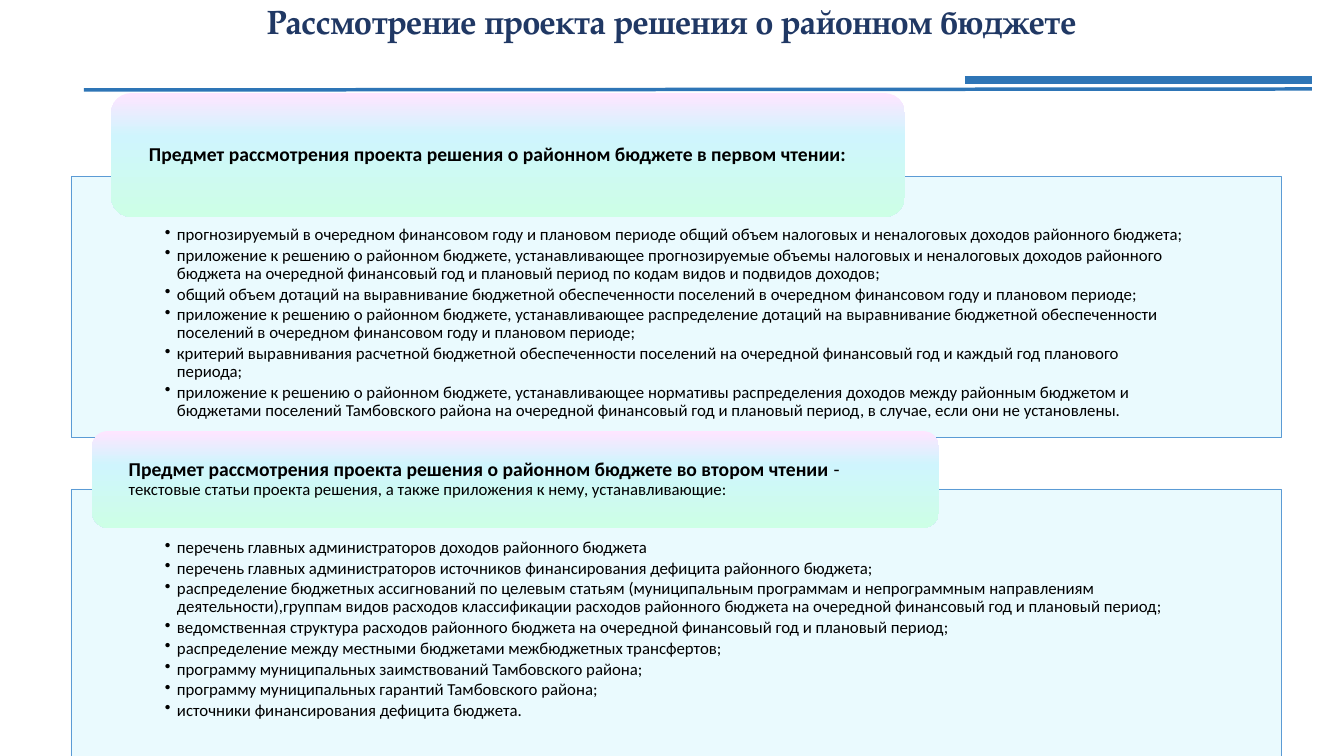
from copy import deepcopy
from dataclasses import dataclass

from lxml.etree import SubElement
from pptx import Presentation
from pptx.dml.color import RGBColor
from pptx.enum.shapes import MSO_CONNECTOR, MSO_SHAPE
from pptx.enum.text import MSO_ANCHOR, PP_ALIGN
from pptx.oxml.ns import qn
from pptx.util import Emu, Pt


@dataclass(frozen=True)
class Theme:
    title_font: str = "TeX Gyre Pagella"
    body_font: str = "Calibri"
    title_size: int = 24
    heading_size: int = 14
    body_size: int = 12
    title: str = "203864"
    text: str = "000000"
    panel: str = "E8FAFE"
    panel_line: str = "5B9BD5"
    rule: str = "2E75B6"
    heading_stops: tuple = ((0, "FFE5FF"), (0.35, "CFF5FD"), (1, "CDFFE6"))


THEME = Theme()
TITLE = "Рассмотрение проекта решения о районном бюджете"

FIRST_HEADING = "Предмет рассмотрения проекта решения о районном бюджете в первом чтении:"
FIRST_ITEMS = [
    "прогнозируемый в очередном финансовом году и плановом периоде общий объем налоговых "
    "и неналоговых доходов районного бюджета;",
    "приложение к решению о районном бюджете, устанавливающее прогнозируемые объемы налоговых "
    "и неналоговых доходов районного бюджета на очередной финансовый год и плановый период "
    "по кодам видов и подвидов доходов;",
    "общий объем дотаций на выравнивание бюджетной обеспеченности поселений в очередном "
    "финансовом году и плановом периоде;",
    "приложение к решению о районном бюджете, устанавливающее распределение дотаций "
    "на выравнивание бюджетной обеспеченности поселений в очередном финансовом году "
    "и плановом периоде;",
    "критерий выравнивания расчетной бюджетной обеспеченности поселений на очередной "
    "финансовый год и каждый год планового периода;",
    "приложение к решению о районном бюджете, устанавливающее нормативы распределения доходов "
    "между районным бюджетом и бюджетами поселений Тамбовского района на очередной финансовый "
    "год и плановый период, в случае, если они не установлены.",
]

SECOND_HEADING = "Предмет рассмотрения проекта решения о районном бюджете во втором чтении "
SECOND_LEAD = "текстовые статьи проекта решения, а также приложения к нему, устанавливающие:"
SECOND_ITEMS = [
    "перечень главных администраторов доходов районного бюджета",
    "перечень главных администраторов источников финансирования дефицита районного бюджета;",
    "распределение бюджетных ассигнований по целевым статьям (муниципальным программам "
    "и непрограммным направлениям деятельности),группам видов расходов классификации расходов "
    "районного бюджета на очередной финансовый год и плановый период;",
    "ведомственная структура расходов районного бюджета на очередной финансовый год "
    "и плановый период;",
    "распределение между местными бюджетами межбюджетных трансфертов;",
    "программу муниципальных заимствований Тамбовского района;",
    "программу муниципальных гарантий Тамбовского района;",
    "источники финансирования дефицита бюджета.",
]


def px(n):
    return Emu(round(n * 914400 / 100.8))


def rgb(color):
    return RGBColor.from_string(color)


def add_run(p, text, size=THEME.body_size, bold=False, color=THEME.text, font=THEME.body_font):
    r = p.add_run()
    r.text = text
    r.font.size = Pt(size)
    r.font.bold = bold
    r.font.name = font
    r.font.color.rgb = rgb(color)


def set_frame(sp, anchor, insets):
    """Wrap the text and set insets in px: left, top, right, bottom."""
    tf = sp.text_frame
    tf.word_wrap = True
    tf.vertical_anchor = anchor
    tf.margin_left, tf.margin_top, tf.margin_right, tf.margin_bottom = map(px, insets)
    return tf


def set_paragraph(p, align=PP_ALIGN.LEFT, after=0):
    p.alignment = align
    p.line_spacing = 0.9
    p.space_after = Pt(after)


def add_bullet(p):
    pPr = p._p.get_or_add_pPr()
    pPr.set("marL", str(px(12)))
    pPr.set("indent", str(-px(12)))
    SubElement(pPr, qn("a:buChar")).set("char", "•")


def add_title(s, text):
    tf = set_frame(s.shapes.add_textbox(px(67), 0, px(1210), px(82)), MSO_ANCHOR.TOP, (10, 5, 10, 5))
    p = tf.paragraphs[0]
    set_paragraph(p, PP_ALIGN.CENTER)
    add_run(p, text, THEME.title_size, True, THEME.title, THEME.title_font)


def add_panel(s, top, height, items):
    sp = s.shapes.add_shape(MSO_SHAPE.RECTANGLE, px(71), px(top), px(1210), px(height))
    sp.shadow.inherit = False
    sp.fill.solid()
    sp.fill.fore_color.rgb = rgb(THEME.panel)
    color = sp._element.spPr.find(qn("a:solidFill"))[0]
    SubElement(color, qn("a:alpha")).set("val", "90000")
    sp.line.color.rgb = rgb(THEME.panel_line)
    sp.line.width = Pt(0.5)
    tf = set_frame(sp, MSO_ANCHOR.TOP, (94, 50, 94, 9))
    for i, item in enumerate(items):
        p = tf.add_paragraph() if i else tf.paragraphs[0]
        p.level = 1
        set_paragraph(p, after=1.8)
        add_bullet(p)
        add_run(p, item)


def fill_gradient(sp, stops):
    sp.fill.gradient()
    sp.fill.gradient_angle = 270
    gs_list = sp._element.spPr.find(qn("a:gradFill")).find(qn("a:gsLst"))
    gs_list.append(deepcopy(gs_list[-1]))
    for stop, (position, color) in zip(sp.fill.gradient_stops, stops):
        stop.position = position
        stop.color.rgb = rgb(color)


def add_heading(s, left, top, width, height):
    """Add a gradient heading box and return its paragraph."""
    sp = s.shapes.add_shape(MSO_SHAPE.ROUNDED_RECTANGLE, px(left), px(top), px(width), px(height))
    sp.shadow.inherit = False
    fill_gradient(sp, THEME.heading_stops)
    sp.line.fill.background()
    p = set_frame(sp, MSO_ANCHOR.MIDDLE, (32, 0, 32, 0)).paragraphs[0]
    set_paragraph(p, after=4.9)
    return p


def add_rule(s, x1, y1, x2, y2, width):
    line = s.shapes.add_connector(MSO_CONNECTOR.STRAIGHT, px(x1), px(y1), px(x2), px(y2))
    line.line.color.rgb = rgb(THEME.rule)
    line.line.width = Pt(width)
    SubElement(line._element.spPr, qn("a:effectLst"))


def main():
    prs = Presentation()
    prs.slide_width, prs.slide_height = px(1344), px(756)
    s = prs.slides.add_slide(prs.slide_layouts[6])

    add_title(s, TITLE)

    add_panel(s, 176, 261, FIRST_ITEMS)
    p = add_heading(s, 111, 93, 794, 124)
    add_run(p, FIRST_HEADING, THEME.heading_size, bold=True)

    add_panel(s, 489, 267, SECOND_ITEMS)
    p = add_heading(s, 92, 431, 847, 97)
    add_run(p, SECOND_HEADING, THEME.heading_size, bold=True)
    add_run(p, "- ", THEME.heading_size)
    add_run(p, SECOND_LEAD)

    add_rule(s, 84, 90, 1312, 89, 2.5)
    add_rule(s, 965, 80, 1312, 80, 6)

    prs.save("out.pptx")


if __name__ == "__main__":
    main()
